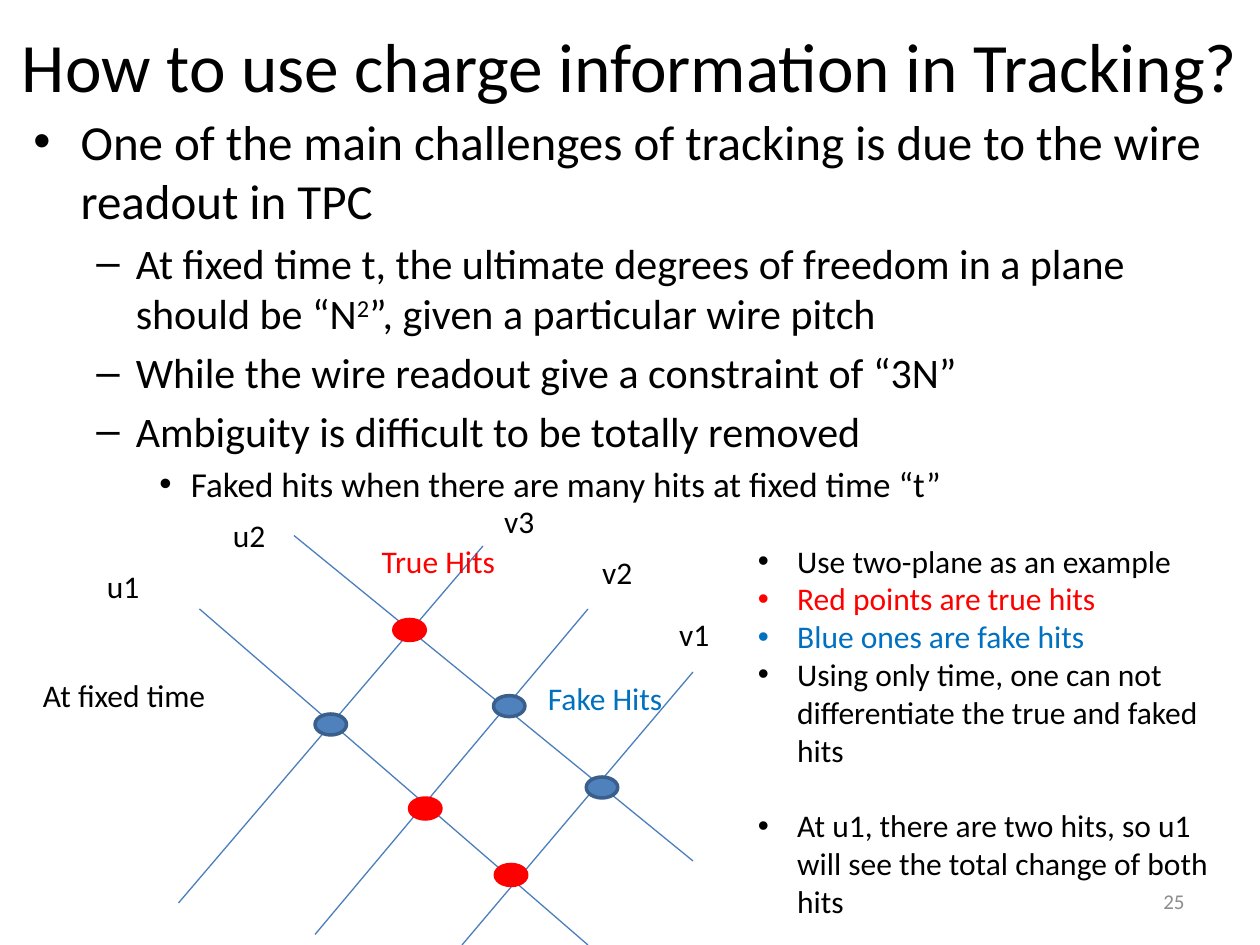
import pptx
import pptx.util
import pptx.dml.color
import pptx.enum.shapes
import pptx.enum.text
import pptx.oxml.ns
import lxml.etree

Pt = pptx.util.Pt
Align = pptx.enum.text.PP_ALIGN
Anchor = pptx.enum.text.MSO_ANCHOR
BLACK, RED, BLUE = "000000", "FF0000", "0070C0"


def tint(code):
    return pptx.dml.color.RGBColor.from_string(code)


def tag(parent, name, **attrs):
    return lxml.etree.SubElement(parent, pptx.oxml.ns.qn(name), **attrs)


def write(para, text, font="Calibri", size=18, color=BLACK, align=Align.LEFT,
          bullet=None, left=0, hang=0, before=0, level=0, power=None):
    para.alignment = align
    para.level = level
    para.space_before = Pt(before)
    for index, part in enumerate(text.split(power) if power else [text]):
        if index:
            add_run(para, power[1:], font, size, color, "30000")
        add_run(para, part, font, size, color)
    if bullet:
        props = para._p.get_or_add_pPr()
        props.set("marL", str(Pt(left)))
        props.set("indent", str(-Pt(hang)))
        tag(props, "a:buFont", typeface="Arial")
        tag(props, "a:buChar", char=bullet)


def add_run(para, text, font, size, color, shift=None):
    run = para.add_run()
    run.text = text
    run.font.name = font
    run.font.size = Pt(size)
    run.font.color.rgb = tint(color)
    if shift:
        run._r.get_or_add_rPr().set("baseline", shift)


class Deck:
    wire, fill, edge = "4B7EBC", "4F81BD", "3A5F8C"
    thin, thick = 0.75, 2
    wide, high = 18, 12

    def __init__(self):
        self.prs = pptx.Presentation()
        self.prs.slide_width, self.prs.slide_height = Pt(720), Pt(540)
        self.slide = self.prs.slides.add_slide(self.prs.slide_layouts[6])

    def text(self, box, *items, anchor=Anchor.TOP, wrap=True):
        frame = self.slide.shapes.add_textbox(*map(Pt, box)).text_frame
        frame.word_wrap = wrap
        frame.vertical_anchor = anchor
        for index, (words, style) in enumerate(items):
            para = frame.add_paragraph() if index else frame.paragraphs[0]
            write(para, words, **style)

    def line(self, *ends):
        kind = pptx.enum.shapes.MSO_CONNECTOR.STRAIGHT
        link = self.slide.shapes.add_connector(kind, *map(Pt, ends))
        link.line.color.rgb = tint(self.wire)
        link.line.width = Pt(self.thin)
        tag(link._element.spPr, "a:effectLst")

    def dot(self, x, y, fill, edge):
        kind = pptx.enum.shapes.MSO_SHAPE.OVAL
        hit = self.slide.shapes.add_shape(kind, Pt(x), Pt(y), Pt(self.wide), Pt(self.high))
        hit.shadow.inherit = False
        hit.fill.solid()
        hit.fill.fore_color.rgb = tint(fill)
        hit.line.color.rgb = tint(edge)
        hit.line.width = Pt(self.thick)


def main():
    deck = Deck()
    deck.text((0, 2, 720, 70),
              ("How to use charge information in Tracking?",
               dict(size=39.6, align=Align.CENTER)), anchor=Anchor.MIDDLE)

    top = dict(size=28, bullet="•", left=27, hang=27, before=5.6)
    mid = dict(size=24, bullet="–", left=58.5, hang=22.5, before=4.8, level=1)
    low = dict(size=20, bullet="•", left=90, hang=18, before=4, level=2)
    deck.text((12, 60, 702, 474),
              ("One of the main challenges of tracking is due to the wire readout in TPC", top),
              ("At fixed time t, the ultimate degrees of freedom in a plane "
               "should be “N^2”, given a particular wire pitch", dict(mid, power="^2")),
              ("While the wire readout give a constraint of “3N”", mid),
              ("Ambiguity is difficult to be totally removed", mid),
              ("Faked hits when there are many hits at fixed time “t”", low))

    deck.text((516, 500.5, 168, 28.75),
              ("25", dict(size=12, color="8C8C8C", align=Align.RIGHT)), anchor=Anchor.MIDDLE)

    note = dict(bullet="•", left=22.5, hang=22.5)
    deck.text((426, 306, 288, 247),
              ("Use two-plane as an example", note),
              ("Red points are true hits", dict(note, color=RED)),
              ("Blue ones are fake hits", dict(note, color=BLUE)),
              ("Using only time, one can not differentiate the true and faked hits", note),
              ("At u1, there are two hits, so u1 will see the total change of both hits",
               dict(note, before=21.6)))

    for ends in ((114, 348, 336, 540), (168, 306, 396, 492), (102, 516, 276, 312),
                 (180, 534, 336, 348), (264, 540, 396, 384)):
        deck.line(*ends)

    for x, y in ((180, 408), (282, 397.5), (335, 444)):
        deck.dot(x, y, deck.fill, deck.edge)
    for x, y in ((234, 456), (225, 354), (283, 494)):
        deck.dot(x, y, RED, RED)

    for words, x, y, width, color in (
            ("True Hits", 211, 306, 88.5, RED), ("Fake Hits", 306, 384.5, 88.5, BLUE),
            ("u1", 54, 320.5, 72, BLACK), ("u2", 126, 291.5, 72, BLACK),
            ("v1", 381, 348, 72, BLACK), ("v2", 337, 312.5, 72, BLACK),
            ("v3", 281, 283.5, 72, BLACK)):
        deck.text((x, y, width, 29), (words, dict(color=color)))
    deck.text((17.5, 382.5, 108.5, 29), ("At fixed time", {}), wrap=False)

    deck.prs.save("out.pptx")


if __name__ == "__main__":
    main()
